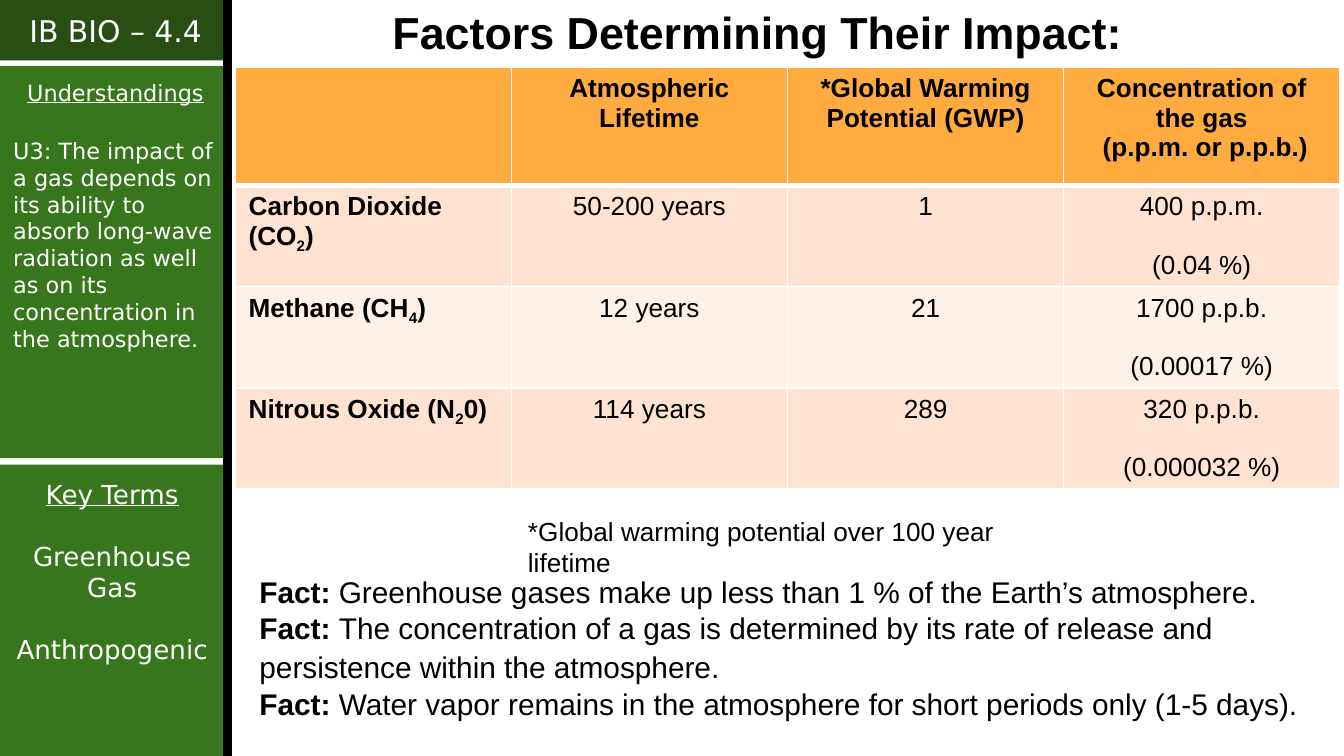
"""Builds the slide on what determines the impact of greenhouse gases."""
from dataclasses import dataclass
from typing import NamedTuple

from lxml.etree import SubElement
from pptx import Presentation
from pptx.dml.color import RGBColor as RGB
from pptx.enum.shapes import MSO_SHAPE as Preset
from pptx.enum.text import MSO_ANCHOR as Anchor, MSO_AUTO_SIZE as AutoSize, PP_ALIGN as Align
from pptx.oxml.ns import qn
from pptx.util import Inches, Pt

WIDTH = Inches(10)
HEIGHT = WIDTH * 9 // 16
BODY_FONT, SIDE_FONT = "Arial", "DejaVu Sans"
BLACK, WHITE, GREEN, DARK_GREEN = "000000", "FFFFFF", "38761D", "274E13"
HEADER_FILL, BAND_FILLS = "FFAB40", ("FFE2CF", "FFF1E8")


class Area(NamedTuple):
    """A place on the slide, in percent of its width and height."""
    left: float
    top: float
    width: float
    height: float


@dataclass
class Span:
    """A stretch of text in one format."""
    text: str
    size: float = 14
    bold: bool = False
    underline: bool = False
    subscript: bool = False


@dataclass
class Line:
    """A paragraph with its alignment and the space before it."""
    spans: list[Span]
    align: Align = Align.LEFT
    before: float = 0


@dataclass
class Panel:
    """A filled sidebar block with its text."""
    area: Area
    fill: str
    lines: list[Line]
    anchor: Anchor = Anchor.TOP


@dataclass
class Gas:
    """A greenhouse gas with its table values."""
    name: str
    formula: tuple[str, str, str]
    lifetime: str
    potential: str
    concentration: str
    share: str


PANELS = [
    Panel(Area(0, 61.45, 16.7, 38.55), GREEN, [
        Line([Span("Key Terms", underline=True)], Align.CENTER),
        Line([Span("Greenhouse Gas")], Align.CENTER, 16.5),
        Line([Span("Anthropogenic ")], Align.CENTER, 16.5)]),
    Panel(Area(0, 8.71, 17.2, 51.9), GREEN, [
        Line([Span("Understandings", 12, underline=True)], Align.CENTER),
        Line([Span("U3: The impact of a gas depends on its ability to absorb long-wave "
                   "radiation as well as on its concentration in the atmosphere.", 12)],
             before=16.5)]),
    Panel(Area(0, 0, 17.2, 8), DARK_GREEN,
          [Line([Span("IB BIO – 4.4", 16)], Align.CENTER)], Anchor.MIDDLE),
]
HEADERS = [[], ["Atmospheric Lifetime"], ["*Global Warming Potential (GWP)"],
           ["Concentration of the gas", " (p.p.m. or p.p.b.)"]]
GASES = [
    Gas("Carbon Dioxide", ("CO", "2", ""), "50-200 years", "1", "400 p.p.m.", "(0.04 %)"),
    Gas("Methane", ("CH", "4", ""), "12 years", "21", "1700 p.p.b.", "(0.00017 %)"),
    Gas("Nitrous Oxide", ("N", "2", "0"), "114 years", "289", "320 p.p.b.", "(0.000032 %)"),
]
FACTS = [
    ["Greenhouse gases make up less than 1 % of the Earth’s atmosphere."],
    ["The concentration of a gas is determined by its rate of release and "
     "persistence within the atmosphere.", " "],
    ["Water vapor remains in the atmosphere for short periods only (1-5 days)."],
]


def colour(code: str) -> RGB:
    """Turn a hex string into a colour."""
    return RGB.from_string(code)


def place(area: Area) -> tuple[int, int, int, int]:
    """Turn an area into slide lengths."""
    return (round(WIDTH * area.left / 100), round(HEIGHT * area.top / 100),
            round(WIDTH * area.width / 100), round(HEIGHT * area.height / 100))


def write(frame, lines: list[Line], font: str = BODY_FONT, ink: str = BLACK) -> None:
    """Fill a text frame with formatted, unbulleted lines."""
    frame.word_wrap = True
    for index, line in enumerate(lines):
        paragraph = frame.add_paragraph() if index else frame.paragraphs[0]
        properties = paragraph._p.get_or_add_pPr()
        properties.set("marL", "0")
        properties.set("indent", "0")
        SubElement(properties, qn("a:buNone"))
        paragraph.alignment = line.align
        paragraph.space_before = Pt(line.before)
        for span in line.spans:
            run = paragraph.add_run()
            run.text = span.text
            run.font.name, run.font.size = font, Pt(span.size)
            run.font.bold, run.font.underline = span.bold, span.underline
            run.font.color.rgb = colour(ink)
            if span.subscript:
                run._r.get_or_add_rPr().set("baseline", "-25000")


def add_block(slide, area: Area, fill: str):
    """Add a plain filled rectangle."""
    block = slide.shapes.add_shape(Preset.RECTANGLE, *place(area))
    block.shadow.inherit = False
    block.fill.solid()
    block.fill.fore_color.rgb = colour(fill)
    block.line.fill.background()
    return block


def add_panel(slide, panel: Panel) -> None:
    """Add a sidebar block with its text."""
    frame = add_block(slide, panel.area, panel.fill).text_frame
    frame.margin_left = frame.margin_right = Inches(0.1)
    frame.margin_top = frame.margin_bottom = Inches(0.1)
    frame.vertical_anchor = panel.anchor
    write(frame, panel.lines, SIDE_FONT, WHITE)


def fill_placeholder(placeholder, area: Area, lines: list[Line]) -> None:
    """Move a template placeholder and write its lines."""
    placeholder.left, placeholder.top, placeholder.width, placeholder.height = place(area)
    placeholder.text_frame.auto_size = AutoSize.NONE
    placeholder.text_frame.vertical_anchor = Anchor.TOP
    write(placeholder.text_frame, lines)


def add_border(cell, side: str, points: float) -> None:
    """Draw one white border of a cell, ahead of its fill."""
    properties = cell._tc.get_or_add_tcPr()
    edge = SubElement(properties, qn(f"a:{side}"), w=str(Pt(points)))
    SubElement(SubElement(edge, qn("a:solidFill")), qn("a:srgbClr"), val=WHITE)


def gas_cells(gas: Gas) -> list[list[Line]]:
    """List the lines of each cell in the row of a gas."""
    symbol, count, rest = gas.formula
    name = [Span(f"{gas.name} ({symbol}", bold=True), Span(count, bold=True, subscript=True),
            Span(f"{rest})", bold=True)]
    lifetime, potential, concentration = (
        Line([Span(value)], Align.CENTER)
        for value in (gas.lifetime, gas.potential, gas.concentration))
    return [[Line(name)], [lifetime], [potential],
            [concentration, Line([Span(gas.share)], Align.CENTER, 15.5)]]


def add_gas_table(slide, area: Area) -> None:
    """Add the table that compares the gases."""
    header = [[Line([Span(text, bold=True)], Align.CENTER) for text in texts]
              for texts in HEADERS]
    rows = [header] + [gas_cells(gas) for gas in GASES]
    table = slide.shapes.add_table(len(rows), len(HEADERS), *place(area)).table
    for index, cells in enumerate(rows):
        table.rows[index].height = Inches(0.75 if index else 0.88)
        fill = BAND_FILLS[(index - 1) % 2] if index else HEADER_FILL
        for column, lines in enumerate(cells):
            cell = table.cell(index, column)
            for side in ("lnL", "lnR", "lnT", "lnB"):
                heavy = (index, side) in ((0, "lnB"), (1, "lnT"))
                add_border(cell, side, 3 if heavy else 1)
            cell.fill.solid()
            cell.fill.fore_color.rgb = colour(fill)
            write(cell.text_frame, lines)


def main() -> None:
    """Build and save the slide."""
    deck = Presentation()
    deck.slide_width, deck.slide_height = WIDTH, HEIGHT
    slide = deck.slides.add_slide(deck.slide_layouts[1])
    title, facts = slide.placeholders
    fill_placeholder(title, Area(28.2, -0.25, 66.7, 8.9),
                     [Line([Span("Factors Determining Their Impact:", 24, bold=True)])])
    fill_placeholder(facts, Area(18.3, 74.96, 80.8, 21.51), [
        Line([Span("Fact: ", 16, bold=True)]
             + [Span(part, 16 if part.strip() else 18) for part in fact]) for fact in FACTS])
    add_gas_table(slide, Area(17.5, 8.89, 82.2, 56))
    note = slide.shapes.add_textbox(*place(Area(38.3, 67.25, 43.3, 6.04)))
    write(note.text_frame, [Line([Span("*Global warming potential over 100 year lifetime")])])
    for panel in PANELS:
        add_panel(slide, panel)
    divider = add_block(slide, Area(16.65, 0, 0.6, 100), BLACK)
    divider.line.color.rgb = colour(BLACK)
    divider.line.width = Pt(0.75)
    deck.save("out.pptx")


if __name__ == "__main__":
    main()
